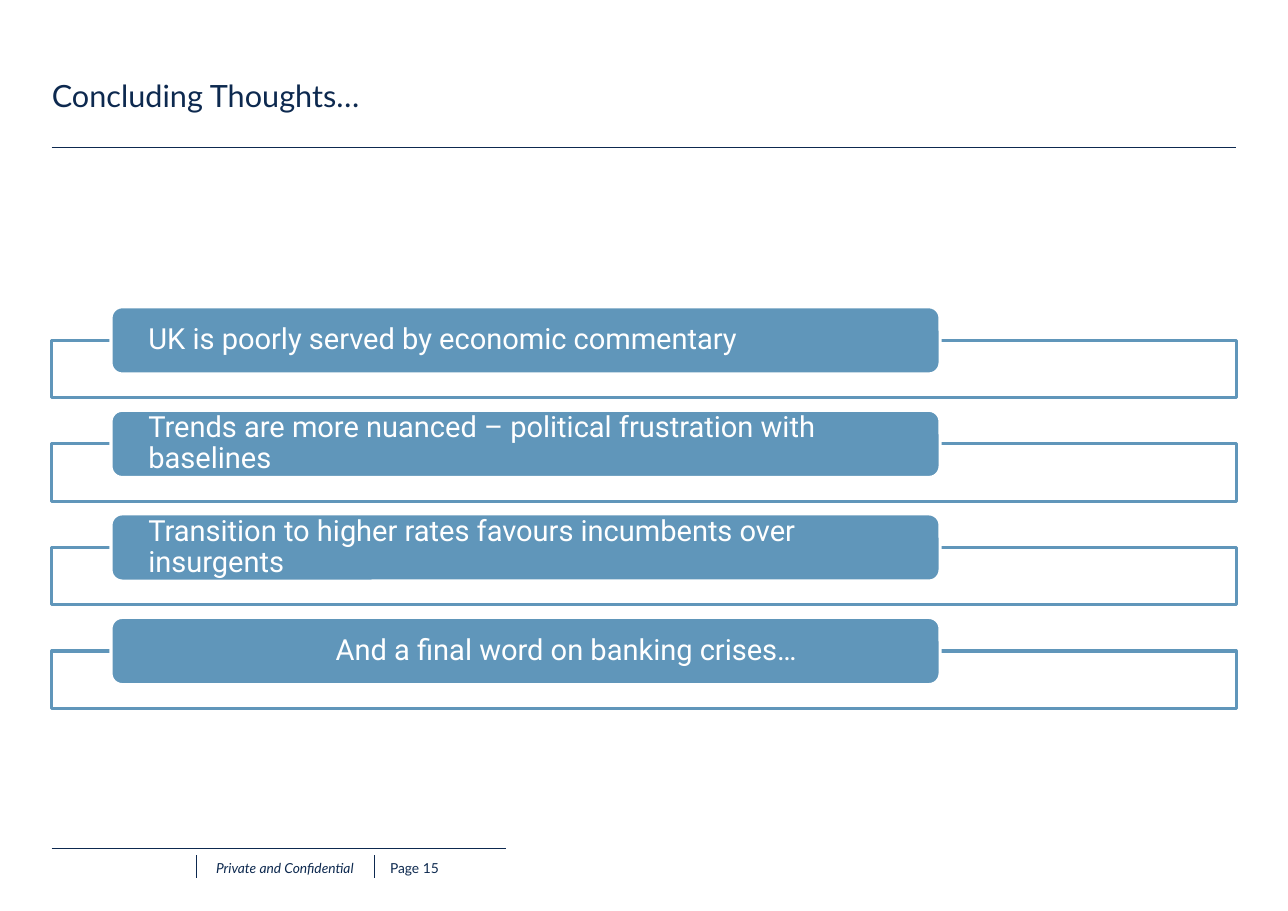
from lxml.etree import SubElement
from pptx import Presentation
from pptx.dml.color import RGBColor
from pptx.enum.shapes import MSO_CONNECTOR, MSO_SHAPE
from pptx.enum.text import MSO_ANCHOR, PP_ALIGN
from pptx.oxml.ns import qn
from pptx.util import Inches, Pt

TITLE = "Concluding Thoughts…"
THOUGHTS = [
    ("UK is poorly served by economic commentary", 0),
    ("Trends are more nuanced – political frustration with baselines", 0),
    ("Transition to higher rates favours incumbents over insurgents", 0),
    ("And a final word on banking crises…", 1.7),
]
FOOTER = [
    ("Private and Confidential", 1.9, 1.37, PP_ALIGN.CENTER, True),
    ("Page 15", 3.54, 0.45, PP_ALIGN.LEFT, False),
]

NAVY = RGBColor(0x0D, 0x29, 0x4F)
BLUE = RGBColor(0x60, 0x96, 0xBA)
WHITE = RGBColor(0xFF, 0xFF, 0xFF)

WIDTH, HEIGHT = 11.69, 8.27
MARGIN = 0.47
CONTENT = WIDTH - 2 * MARGIN
RIGHT = MARGIN + CONTENT
TITLE_TOP, TITLE_RULE = 0.75, 1.34
FIRST_FRAME, PITCH, FRAME_HEIGHT = 3.09, 0.94, 0.52
BAR_LEFT, BAR_WIDTH, BAR_HEIGHT = MARGIN + 0.05 * CONTENT, 0.7 * CONTENT, 0.61
BAR_INSET = 0.31
FOOTER_RULE, FOOTER_TOP, FOOTER_HEIGHT = 7.7, 7.8, 0.15
RULES = [
    (MARGIN, TITLE_RULE, RIGHT, TITLE_RULE, 1),
    (MARGIN, FOOTER_RULE, 4.59, FOOTER_RULE, 0.5),
    (1.78, 7.97, 1.78, 7.76, 0.5),
    (3.4, 7.97, 3.4, 7.76, 0.5),
]

deck = Presentation()
deck.slide_width, deck.slide_height = Inches(WIDTH), Inches(HEIGHT)
slide = deck.slides.add_slide(deck.slide_layouts[6])


def apply(target, formats):
    for name, value in formats.items():
        setattr(target, name, value)


def write(holder, words, font, layout, frame, color):
    apply(holder.text_frame, {"margin_left": 0, "margin_right": 0,
                              "margin_top": 0, "margin_bottom": 0} | frame)
    paragraph = holder.text_frame.paragraphs[0]
    paragraph.text = words
    apply(paragraph, layout)
    apply(paragraph.font, font)
    paragraph.font.color.rgb = color
    return paragraph


def add_label(left, top, width, height, *content):
    label = slide.shapes.add_textbox(*map(Inches, (left, top, width, height)))
    write(label, *content)


def add_block(preset, left, top, width, height, fill, outline):
    block = slide.shapes.add_shape(preset, *map(Inches, (left, top, width, height)))
    block.shadow.inherit = False
    block.fill.solid()
    block.fill.fore_color.rgb = fill
    block.line.color.rgb = outline
    block.line.width = Pt(2)
    return block


for x1, y1, x2, y2, weight in RULES:
    rule = slide.shapes.add_connector(MSO_CONNECTOR.STRAIGHT, *map(Inches, (x1, y1, x2, y2)))
    rule.line.color.rgb = NAVY
    rule.line.width = Pt(weight)
    SubElement(rule.element.spPr, qn("a:effectLst"))

for words, left, width, alignment, italic in FOOTER:
    add_label(left, FOOTER_TOP, width, FOOTER_HEIGHT, words,
              {"name": "Lato", "size": Pt(9), "italic": italic},
              {"alignment": alignment},
              {"word_wrap": False, "vertical_anchor": MSO_ANCHOR.MIDDLE}, NAVY)

for row, (thought, indent) in enumerate(THOUGHTS):
    frame_top = FIRST_FRAME + row * PITCH
    add_block(MSO_SHAPE.RECTANGLE, MARGIN, frame_top, CONTENT, FRAME_HEIGHT, WHITE, BLUE)
    bar = add_block(MSO_SHAPE.ROUNDED_RECTANGLE, BAR_LEFT, frame_top - BAR_HEIGHT / 2,
                    BAR_WIDTH, BAR_HEIGHT, BLUE, WHITE)
    line = write(bar, thought, {"name": "Roboto", "size": Pt(19)},
                 {"alignment": PP_ALIGN.LEFT, "line_spacing": 0.9},
                 {"margin_left": Inches(BAR_INSET), "margin_right": Inches(BAR_INSET),
                  "word_wrap": True, "vertical_anchor": MSO_ANCHOR.MIDDLE}, WHITE)
    if indent:
        line._p.get_or_add_pPr().set("marL", str(Inches(indent)))

add_label(MARGIN, TITLE_TOP, CONTENT, TITLE_RULE - TITLE_TOP, TITLE,
          {"name": "Lato", "size": Pt(20)}, {"line_spacing": 0.85},
          {"word_wrap": True, "vertical_anchor": MSO_ANCHOR.TOP}, NAVY)

deck.save("out.pptx")
